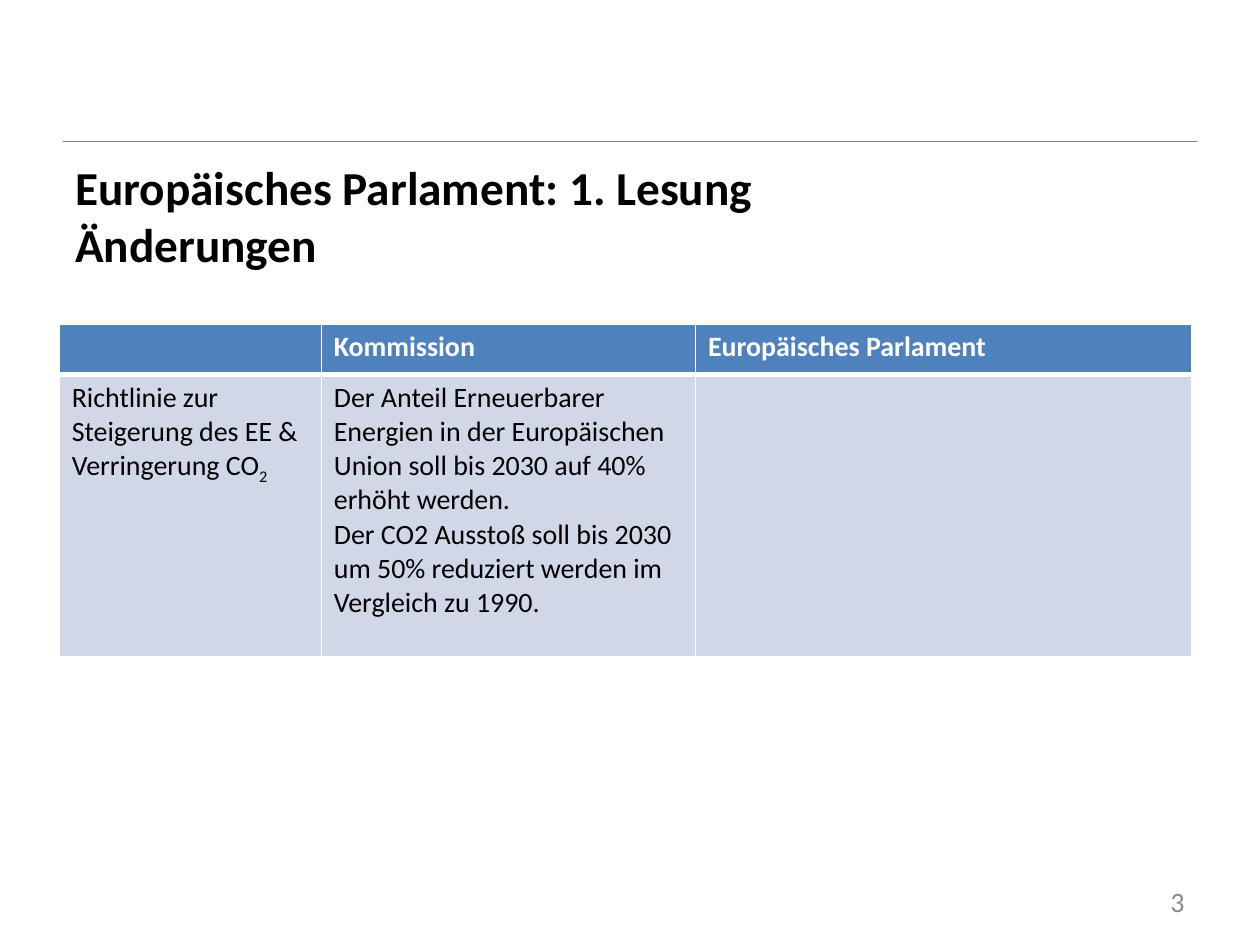
from lxml.etree import SubElement
from pptx import Presentation
from pptx.dml.color import RGBColor
from pptx.enum.shapes import MSO_CONNECTOR
from pptx.enum.text import MSO_ANCHOR, PP_ALIGN
from pptx.oxml.ns import qn
from pptx.util import Inches, Pt

COLORS = {
    "rule": "808080",
    "title": "000000",
    "header": "4F81BD",
    "header_text": "FFFFFF",
    "body": "D0D8E8",
    "body_text": "000000",
    "border": "FFFFFF",
    "number": "8C8C8C",
}
FORMATS = {
    "title": {"name": "Calibri", "size": Pt(27), "bold": True},
    "header_text": {"name": "Calibri", "size": Pt(16), "bold": True},
    "body_text": {"name": "Calibri", "size": Pt(16), "bold": False},
    "number": {"name": "Calibri", "size": Pt(16), "bold": False},
}
BORDERS = {
    "header": {"lnL": 1, "lnR": 1, "lnT": 1, "lnB": 3},
    "body": {"lnL": 1, "lnR": 1, "lnT": 3, "lnB": 1},
}
COLUMN_WIDTHS = [2.08, 2.97, 3.94]
ROW_HEIGHTS = [0.4, 2.24]
ROWS = [
    ("header", ["", "Kommission", "Europäisches Parlament"]),
    ("body", [
        "Richtlinie zur Steigerung des EE & Verringerung CO",
        "Der Anteil Erneuerbarer Energien in der Europäischen Union soll bis 2030 "
        "auf 40% erhöht werden.\n"
        "Der CO2 Ausstoß soll bis 2030 um 50% reduziert werden im Vergleich zu 1990.",
        "",
    ]),
]


def color(role):
    """Return the colour of a role."""
    return RGBColor.from_string(COLORS[role])


def format_font(font, role):
    """Apply the format values and colour of a role to a font."""
    for attribute, value in FORMATS[role].items():
        setattr(font, attribute, value)
    font.color.rgb = color(role)


def add_rule(slide, left, top, width):
    """Draw the thin horizontal rule above the title."""
    rule = slide.shapes.add_connector(
        MSO_CONNECTOR.STRAIGHT, left, top, left + width, top)
    rule.line.color.rgb = color("rule")
    rule.line.width = Pt(0.5)
    SubElement(rule.element.spPr, qn("a:effectLst"))


def add_label(slide, box, text, role, alignment):
    """Place one vertically centred paragraph in the box."""
    frame = slide.shapes.add_textbox(*box).text_frame
    frame.word_wrap = True
    frame.vertical_anchor = MSO_ANCHOR.MIDDLE
    label = frame.paragraphs[0]
    label.text = text
    label.alignment = alignment
    for run in label.runs:
        format_font(run.font, role)


def set_borders(cell, widths):
    """Draw the cell's borders, which come before its fill."""
    properties = cell._tc.get_or_add_tcPr()
    for position, (side, width) in enumerate(widths.items()):
        border = SubElement(properties, qn(f"a:{side}"), w=str(Pt(width)))
        fill = SubElement(border, qn("a:solidFill"))
        SubElement(fill, qn("a:srgbClr"), val=COLORS["border"])
        properties.insert(position, border)


def add_comparison(slide, left, top, width, height):
    """Place the table comparing the Commission with the Parliament."""
    table = slide.shapes.add_table(
        len(ROW_HEIGHTS), len(COLUMN_WIDTHS), left, top, width, height).table
    for column, column_width in zip(table.columns, COLUMN_WIDTHS):
        column.width = Inches(column_width)
    for row, row_height, (role, texts) in zip(table.rows, ROW_HEIGHTS, ROWS):
        row.height = Inches(row_height)
        for cell, text in zip(row.cells, texts):
            cell.text = text
            cell.fill.solid()
            cell.fill.fore_color.rgb = color(role)
            set_borders(cell, BORDERS[role])
            for paragraph in cell.text_frame.paragraphs:
                for run in paragraph.runs:
                    format_font(run.font, f"{role}_text")
    subscript = table.cell(1, 0).text_frame.paragraphs[0].add_run()
    subscript.text = "2"
    format_font(subscript.font, "body_text")
    subscript._r.get_or_add_rPr().set("baseline", "-25000")


def main():
    """Build the slide and save it."""
    presentation = Presentation()
    presentation.slide_width = Inches(10)
    presentation.slide_height = Inches(7.5)
    slide = presentation.slides.add_slide(presentation.slide_layouts[6])
    add_rule(slide, Inches(0.5), Inches(1.12), Inches(9))
    title_box = [Inches(value) for value in (0.5, 1.29, 9, 0.84)]
    add_label(slide, title_box, "Europäisches Parlament: 1. Lesung\vÄnderungen",
              "title", PP_ALIGN.LEFT)
    add_comparison(slide, Inches(0.47), Inches(2.57), Inches(9), Inches(2.64))
    number_box = [Inches(value) for value in (7.17, 6.95, 2.33, 0.4)]
    add_label(slide, number_box, "3", "number", PP_ALIGN.RIGHT)
    presentation.save("out.pptx")


if __name__ == "__main__":
    main()
